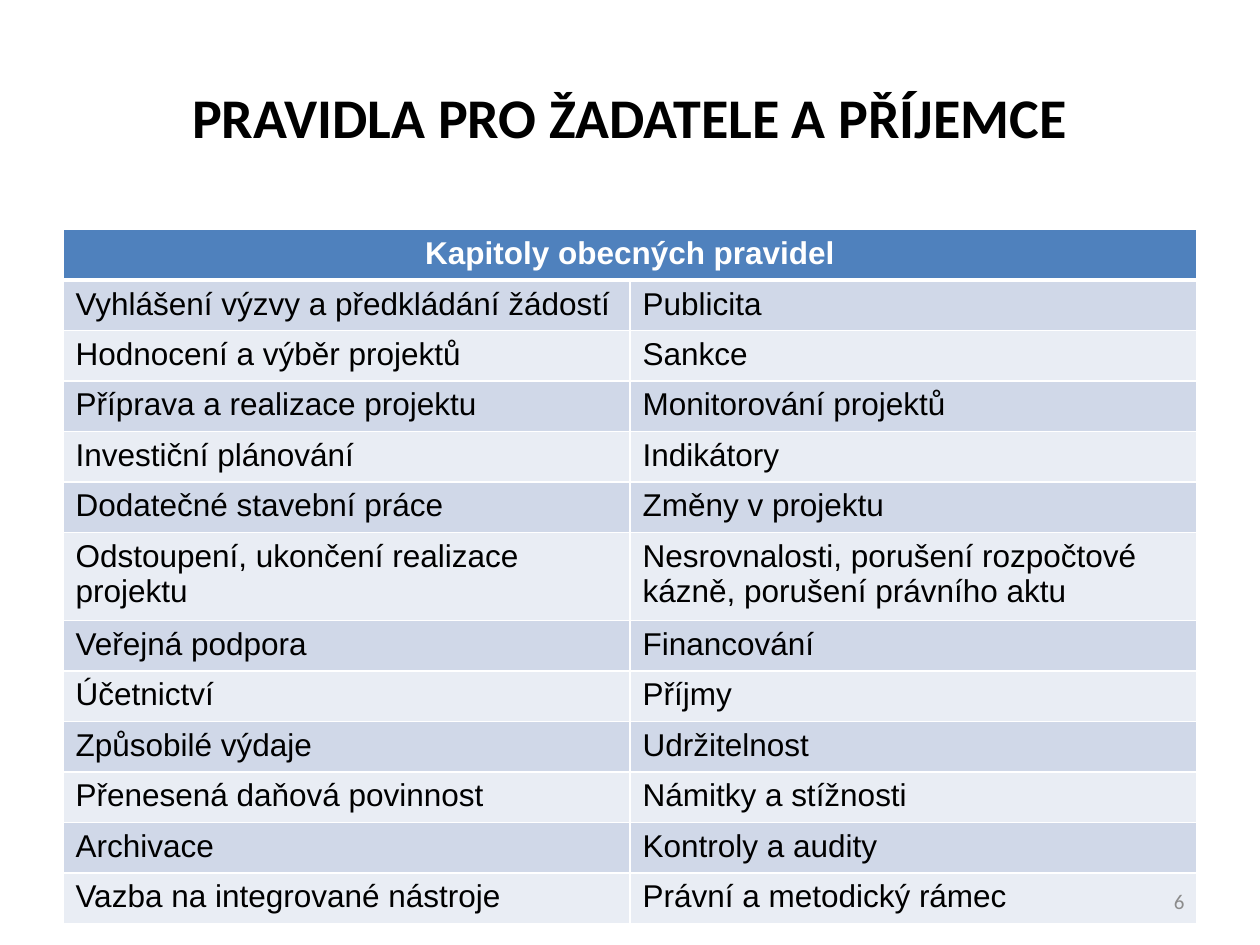
from lxml.etree import SubElement
from pptx import Presentation
from pptx.dml.color import RGBColor
from pptx.enum.text import MSO_ANCHOR, PP_ALIGN
from pptx.oxml.ns import qn
from pptx.util import Cm, Pt

# Content
TITLE = "PRAVIDLA PRO ŽADATELE A PŘÍJEMCE"
HEADING = "Kapitoly obecných pravidel"
CHAPTERS = [
    ("Vyhlášení výzvy a předkládání žádostí", "Publicita"),
    ("Hodnocení a výběr projektů", "Sankce"),
    ("Příprava a realizace projektu", "Monitorování projektů"),
    ("Investiční plánování", "Indikátory"),
    ("Dodatečné stavební práce", "Změny v projektu"),
    ("Odstoupení, ukončení realizace projektu",
     "Nesrovnalosti, porušení rozpočtové kázně, porušení právního aktu"),
    ("Veřejná podpora", "Financování"),
    ("Účetnictví", "Příjmy"),
    ("Způsobilé výdaje", "Udržitelnost"),
    ("Přenesená daňová povinnost", "Námitky a stížnosti"),
    ("Archivace", "Kontroly a audity"),
    ("Vazba na integrované nástroje", "Právní a metodický rámec"),
]
PAGE_NUMBER = "6"

# Formats
TITLE_FONT = {"name": "Calibri", "size": Pt(32), "bold": True}
HEADING_FONT = {"name": "Arial", "size": Pt(18), "bold": True}
BODY_FONT = {"name": "Arial", "size": Pt(18), "bold": False}
NUMBER_FONT = {"name": "Calibri", "size": Pt(12), "bold": False}
HEADING_FILL = "4F81BD"
BAND_FILLS = ("D0D8E8", "E9EDF4")
WHITE, BLACK, GREY = "FFFFFF", "000000", "8C8C8C"

# Table measures in centimetres
LEFT, TOP, WIDTH = 1.27, 4.63, 22.86
ROW_HEIGHT, TALL_HEIGHT = 0.99, 1.78
TALL_ROW = 6


def color(value):
    return RGBColor.from_string(value)


def write(frame, text, formats, ink, align):
    para = frame.paragraphs[0]
    para.alignment = align
    span = para.add_run()
    span.text = text
    for name, value in formats.items():
        setattr(span.font, name, value)
    span.font.color.rgb = color(ink)


def add_text(page, place, text, formats, ink, align):
    box = page.shapes.add_textbox(*(Cm(length) for length in place))
    frame = box.text_frame
    frame.word_wrap = True
    frame.vertical_anchor = MSO_ANCHOR.MIDDLE
    write(frame, text, formats, ink, align)


def style_cell(cell, fill, widths):
    """Draw white borders (left, right, top, bottom), then the fill."""
    properties = cell._tc.get_or_add_tcPr()
    for side, width in zip("LRTB", widths):
        line = SubElement(properties, qn(f"a:ln{side}"), w=str(Pt(width)))
        solid = SubElement(line, qn("a:solidFill"))
        SubElement(solid, qn("a:srgbClr"), val=WHITE)
    cell.fill.solid()
    cell.fill.fore_color.rgb = color(fill)


def add_chapters(page):
    count = len(CHAPTERS) + 1
    height = count * ROW_HEIGHT + TALL_HEIGHT - ROW_HEIGHT
    table = page.shapes.add_table(
        count, 2, Cm(LEFT), Cm(TOP), Cm(WIDTH), Cm(height)).table
    for column in table.columns:
        column.width = Cm(WIDTH / 2)
    for index, row in enumerate(table.rows):
        row.height = Cm(TALL_HEIGHT if index == TALL_ROW else ROW_HEIGHT)

    # Heading across both columns
    for cell in table.rows[0].cells:
        style_cell(cell, HEADING_FILL, (1, 1, 1, 3))
    heading = table.cell(0, 0)
    heading.merge(table.cell(0, 1))
    write(heading.text_frame, HEADING, HEADING_FONT, WHITE, PP_ALIGN.CENTER)

    # Banded chapter rows
    for index, chapters in enumerate(CHAPTERS):
        top_width = 3 if index == 0 else 1
        for cell, chapter in zip(table.rows[index + 1].cells, chapters):
            style_cell(cell, BAND_FILLS[index % 2], (1, 1, top_width, 1))
            write(cell.text_frame, chapter, BODY_FONT, BLACK, PP_ALIGN.LEFT)


def main():
    deck = Presentation()
    deck.slide_width, deck.slide_height = Cm(25.4), Cm(19.05)
    page = deck.slides.add_slide(deck.slide_layouts[6])
    add_text(page, (1.27, 0.76, 22.86, 3.18), TITLE, TITLE_FONT, BLACK,
             PP_ALIGN.CENTER)
    add_chapters(page)
    add_text(page, (18.2, 17.65, 5.93, 1.02), PAGE_NUMBER, NUMBER_FONT, GREY,
             PP_ALIGN.RIGHT)
    deck.save("out.pptx")


if __name__ == "__main__":
    main()
